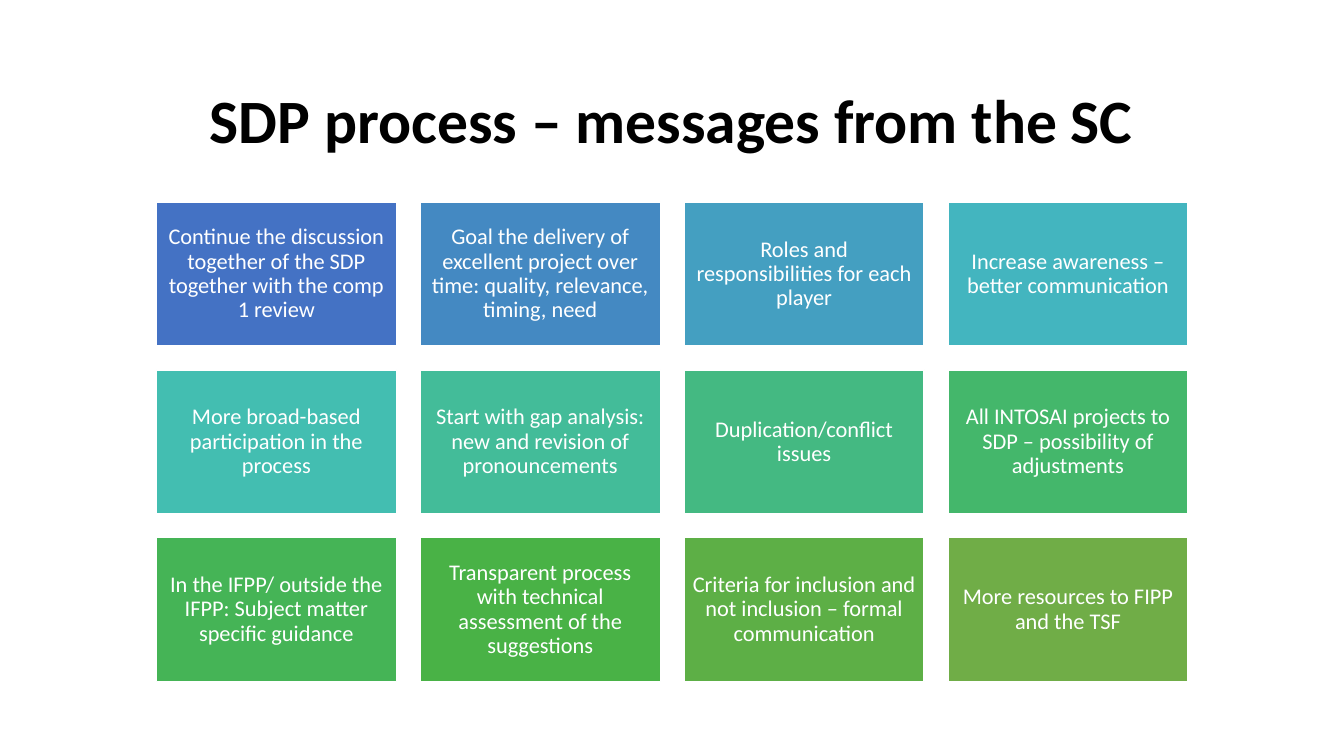
"""Build the slide of messages on the SDP process."""
from dataclasses import dataclass

from pptx import Presentation
from pptx.dml.color import RGBColor
from pptx.enum.shapes import MSO_SHAPE
from pptx.enum.text import MSO_ANCHOR, MSO_AUTO_SIZE, PP_ALIGN
from pptx.util import Cm, Pt

RECTANGLE = MSO_SHAPE.RECTANGLE
MIDDLE = MSO_ANCHOR.MIDDLE
NO_AUTOFIT = MSO_AUTO_SIZE.NONE
CENTER = PP_ALIGN.CENTER
TITLE_ONLY_LAYOUT = 5


@dataclass(frozen=True)
class Theme:
    """Font, type sizes and colours of the slide."""
    font: str = "Calibri"
    title_size: int = 44
    message_size: int = 16
    title_color: str = "000000"
    light: str = "FFFFFF"


THEME = Theme()
TITLE = "SDP process – messages from the SC"
MESSAGES = [
    ("Continue the discussion together of the SDP together with the comp 1 review", "4472C4"),
    ("Goal the delivery of excellent project over time: quality, relevance, timing, need", "4489C2"),
    ("Roles and responsibilities for each player", "449FC1"),
    ("Increase awareness – better communication", "43B5BF"),
    ("More broad-based participation in the process", "43BEB1"),
    ("Start with gap analysis: new and revision of pronouncements", "43BC99"),
    ("Duplication/conflict issues", "44B982"),
    ("All INTOSAI projects to SDP – possibility of adjustments", "44B76B"),
    ("In the IFPP/ outside the IFPP: Subject matter specific guidance", "45B456"),
    ("Transparent process with technical assessment of the suggestions", "49B246"),
    ("Criteria for inclusion and not inclusion – formal communication", "5DAF46"),
    ("More resources to FIPP and the TSF", "70AD47"),
]
COLUMNS = 4
GRID_LEFT, GRID_TOP = 3.94, 5.09
BOX_WIDTH, BOX_HEIGHT = 6.05, 3.63
COLUMN_STEP, ROW_STEP = 6.65, 4.23


def write_text(shape, text, size, color, bold=False):
    """Put one centred paragraph into a shape."""
    frame = shape.text_frame
    frame.text = text
    frame.word_wrap = True
    frame.auto_size = NO_AUTOFIT
    frame.vertical_anchor = MIDDLE
    paragraph = frame.paragraphs[0]
    paragraph.alignment = CENTER
    paragraph.line_spacing = 0.9
    font = paragraph.font
    font.name = THEME.font
    font.size = Pt(size)
    font.bold = bold
    font.color.rgb = RGBColor.from_string(color)


def add_title(slide, text):
    """Place and fill the title placeholder."""
    title = slide.shapes.title
    title.left, title.top = Cm(2.33), Cm(1.55)
    title.width, title.height = Cm(29.21), Cm(3.15)
    write_text(title, text, THEME.title_size, THEME.title_color, bold=True)


def add_message(slide, index, text, fill):
    """Add one message box at its place in the grid."""
    row, column = divmod(index, COLUMNS)
    box = slide.shapes.add_shape(
        RECTANGLE,
        Cm(GRID_LEFT + column * COLUMN_STEP), Cm(GRID_TOP + row * ROW_STEP),
        Cm(BOX_WIDTH), Cm(BOX_HEIGHT))
    box.shadow.inherit = False
    box.fill.solid()
    box.fill.fore_color.rgb = RGBColor.from_string(fill)
    box.line.color.rgb = RGBColor.from_string(THEME.light)
    box.line.width = Pt(1)
    frame = box.text_frame
    frame.margin_left = frame.margin_right = Cm(0.17)
    frame.margin_top = frame.margin_bottom = Cm(0.17)
    write_text(box, text, THEME.message_size, THEME.light)


def main():
    """Build and save the presentation."""
    presentation = Presentation()
    presentation.slide_width, presentation.slide_height = Cm(33.87), Cm(19.05)
    slide = presentation.slides.add_slide(presentation.slide_layouts[TITLE_ONLY_LAYOUT])
    add_title(slide, TITLE)
    for index, (text, fill) in enumerate(MESSAGES):
        add_message(slide, index, text, fill)
    presentation.save("out.pptx")


if __name__ == "__main__":
    main()
